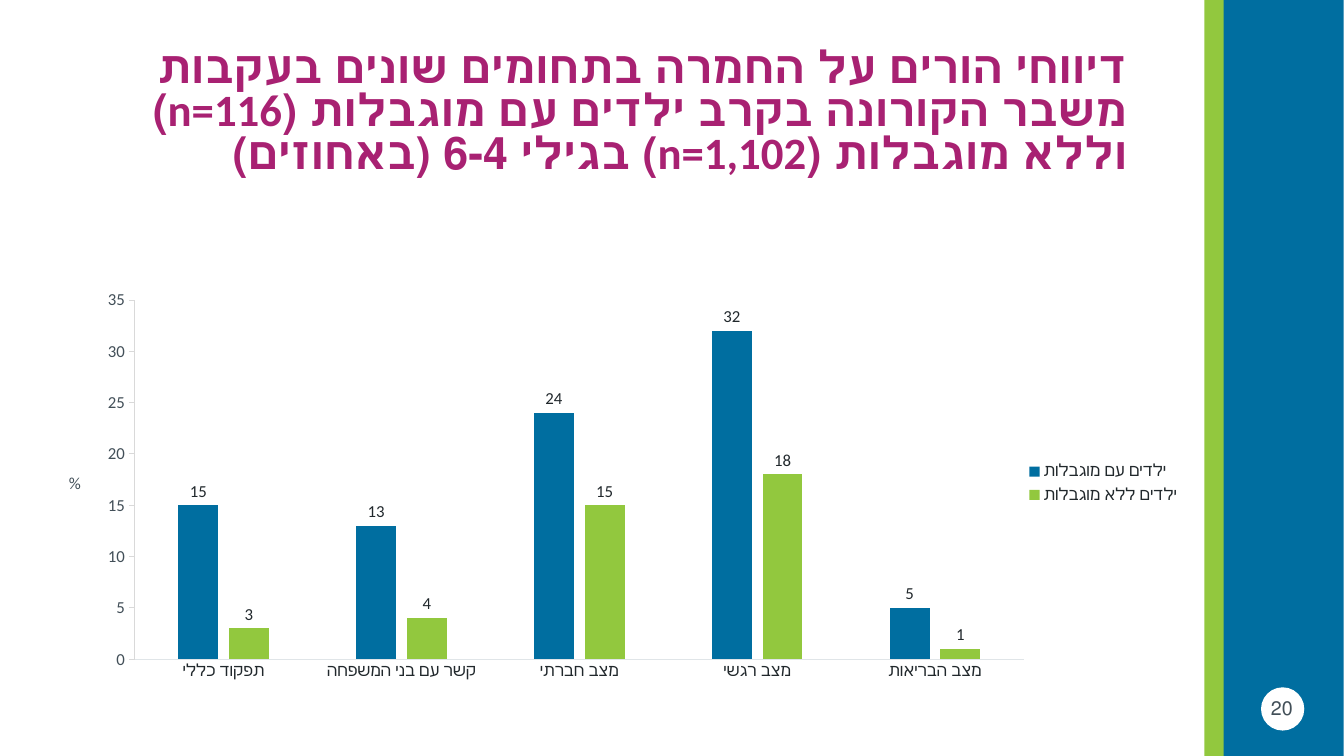
from lxml.etree import SubElement
from pptx import Presentation
from pptx.chart.data import CategoryChartData
from pptx.dml.color import RGBColor
from pptx.enum.chart import XL_CHART_TYPE, XL_LABEL_POSITION, XL_LEGEND_POSITION, XL_TICK_MARK
from pptx.enum.shapes import MSO_SHAPE
from pptx.enum.text import MSO_ANCHOR, PP_ALIGN
from pptx.oxml.ns import qn
from pptx.util import Cm, Pt

TITLE = ("דיווחי הורים על החמרה בתחומים שונים בעקבות משבר הקורונה בקרב ילדים "
         "עם מוגבלות (n=116) וללא מוגבלות (n=1,102) בגילי 6-4 (באחוזים)")
PAGE = "20"
UNIT = "%"
DOMAINS = ["תפקוד כללי", "קשר עם בני המשפחה", "מצב חברתי", "מצב רגשי", "מצב הבריאות"]
SERIES = [
    ("ילדים עם מוגבלות", (15, 13, 24, 32, 5), "blue"),
    ("ילדים ללא מוגבלות", (3, 4, 15, 18, 1), "green"),
]
COLORS = {"blue": "006EA0", "green": "92C83E", "white": "FFFFFF", "plum": "A82172",
          "slate": "424F58", "ink": "21282C", "cat_line": "E0E5E8", "val_line": "D9D9D9"}
BAND = [
    (MSO_SHAPE.RECTANGLE, (30.35, 0, 0.51, 19.05), "green"),
    (MSO_SHAPE.RECTANGLE, (30.84, 0, 3.02, 19.05), "blue"),
    (MSO_SHAPE.OVAL, (31.78, 17.32, 1.09, 1.09), "white"),
]
TEXTS = [
    (PAGE, (31.57, 17.42, 1.47, 1.02), PP_ALIGN.CENTER, MSO_ANCHOR.TOP, 1.0,
     {"size": 14, "color": "slate"}),
    (TITLE, (1.19, 1.02, 27.48, 3.68), PP_ALIGN.RIGHT, MSO_ANCHOR.MIDDLE, 0.8,
     {"size": 32, "color": "plum", "bold": True}),
]
CHART_BOX = (1.19, 7.11, 29.41, 10.24)
PLOT_AREA = {"layoutTarget": "inner", "xMode": "edge", "yMode": "edge",
             "x": 0.075, "y": 0.044, "w": 0.762, "h": 0.884}
LEGEND_AREA = {"xMode": "edge", "yMode": "edge", "x": 0.82, "y": 0.43, "w": 0.17, "h": 0.13}
UNIT_AREA = {"xMode": "edge", "yMode": "edge", "x": 0.016, "y": 0.46}


def rgb(name):
    return RGBColor.from_string(COLORS[name])


def set_font(font, size, color, bold=False):
    for key, value in {"name": "Calibri", "size": Pt(size), "bold": bold}.items():
        setattr(font, key, value)
    font.color.rgb = rgb(color)


def set_layout(parent, area, index):
    for old in parent.findall(qn("c:layout")):
        parent.remove(old)
    layout = SubElement(parent, qn("c:layout"))
    manual = SubElement(layout, qn("c:manualLayout"))
    for key, value in area.items():
        SubElement(manual, qn("c:" + key)).set("val", str(value))
    parent.insert(index, layout)


def add_band(s):
    for kind, box, color in BAND:
        sp = s.shapes.add_shape(kind, *map(Cm, box))
        sp.shadow.inherit = False
        sp.fill.solid()
        sp.fill.fore_color.rgb = rgb(color)
        sp.line.fill.background()


def add_text(s, text, box, align, anchor, spacing, style):
    tf = s.shapes.add_textbox(*map(Cm, box)).text_frame
    tf.word_wrap = True
    tf.vertical_anchor = anchor
    p = tf.paragraphs[0]
    p.alignment = align
    p.line_spacing = spacing
    p._p.get_or_add_pPr().set("rtl", "1")
    r = p.add_run()
    r.text = text
    set_font(r.font, **style)


def style_axis(axis, tick, text_color, line_color):
    formats = {"has_major_gridlines": False, "major_tick_mark": tick,
               "minor_tick_mark": XL_TICK_MARK.NONE}
    for key, value in formats.items():
        setattr(axis, key, value)
    set_font(axis.tick_labels.font, 12, text_color)
    axis.format.line.color.rgb = rgb(line_color)
    axis.format.line.width = Pt(0.75)


def add_chart(s):
    data = CategoryChartData()
    data.categories = DOMAINS
    for name, values, color in SERIES:
        data.add_series(name, values)
    chart = s.shapes.add_chart(XL_CHART_TYPE.COLUMN_CLUSTERED, *map(Cm, CHART_BOX), data).chart
    chart.has_title = False
    set_font(chart.font, 10, "slate")

    plot = chart.plots[0]
    for key, value in {"gap_width": 219, "overlap": -27, "vary_by_categories": False}.items():
        setattr(plot, key, value)
    for series, (name, values, color) in zip(plot.series, SERIES):
        series.format.fill.solid()
        series.format.fill.fore_color.rgb = rgb(color)
        labels = series.data_labels
        labels.show_value = True
        labels.position = XL_LABEL_POSITION.OUTSIDE_END
        set_font(labels.font, 12, "ink")

    style_axis(chart.category_axis, XL_TICK_MARK.NONE, "ink", "cat_line")
    axis = chart.value_axis
    style_axis(axis, XL_TICK_MARK.OUTSIDE, "slate", "val_line")
    for key, value in {"minimum_scale": 0, "maximum_scale": 35, "major_unit": 5}.items():
        setattr(axis, key, value)
    tf = axis.axis_title.text_frame
    tf.text = UNIT
    set_font(tf.paragraphs[0].runs[0].font, 12, "slate")
    body = tf._txBody.find(qn("a:bodyPr"))
    body.set("rot", "0")
    body.set("vert", "horz")

    chart.has_legend = True
    legend = chart.legend
    legend.position = XL_LEGEND_POSITION.RIGHT
    legend.include_in_layout = False
    set_font(legend.font, 12, "ink")

    set_layout(chart._chartSpace.chart.plotArea, PLOT_AREA, 0)
    set_layout(legend._element, LEGEND_AREA, 1)
    set_layout(axis.axis_title._element, UNIT_AREA, 1)


def main():
    prs = Presentation()
    prs.slide_width, prs.slide_height = Cm(33.87), Cm(19.05)
    s = prs.slides.add_slide(prs.slide_layouts[6])
    add_band(s)
    add_chart(s)
    for item in TEXTS:
        add_text(s, *item)
    prs.save("out.pptx")


if __name__ == "__main__":
    main()
